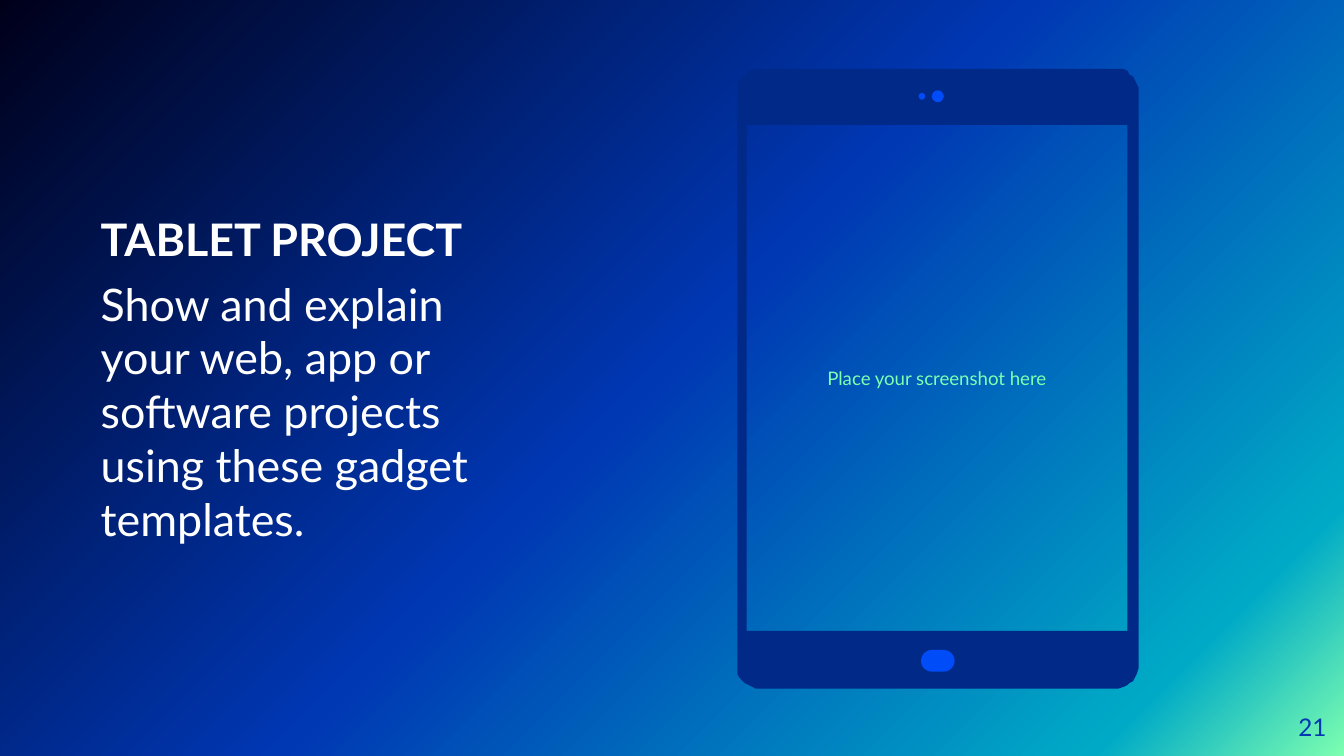
from math import cos, radians, sin

from lxml import etree
from pptx import Presentation
from pptx.dml.color import RGBColor
from pptx.enum.shapes import MSO_SHAPE
from pptx.enum.text import MSO_ANCHOR, PP_ALIGN
from pptx.oxml.ns import qn
from pptx.util import Pt

OVAL = MSO_SHAPE.OVAL
ROUNDED = MSO_SHAPE.ROUNDED_RECTANGLE
MIDDLE = MSO_ANCHOR.MIDDLE
LEFT, CENTER, RIGHT = PP_ALIGN.LEFT, PP_ALIGN.CENTER, PP_ALIGN.RIGHT

FONT = "Lato"
COLORS = {
    "mint": "7DFFB1",
    "teal": "00AAC6",
    "blue": "0037B3",
    "night": "00001A",
    "frame": "002988",
    "accent": "004CF8",
    "white": "FFFFFF",
}
BACKGROUND_STOPS = [(0, "mint"), (12, "teal"), (51, "blue"), (100, "night")]
BACKGROUND_ANGLE = 225

# Boxes are left, top, width, height in points
TABLET = (394.7, 36.6, 215.4, 332.6)
SCREEN = (400.3, 66.7, 204, 271.8)
CORNER_RADIUS = 13
CONTROLS = [
    (ROUNDED, (493.4, 348.2, 18, 11.6)),  # home button
    (OVAL, (492.2, 49.8, 3.4, 3.6)),      # sensor
    (OVAL, (499.2, 48.4, 6.4, 6.4)),      # camera
]

# Box, inset, alignment, size, colour, paragraphs as (text, bold)
TEXTS = [
    ((399.6, 67, 204.5, 270.7), 7.2, CENTER, 10, "mint",
     [("Place your screenshot here", False)]),
    ((667.4, 373.7, 43.2, 31), 0, RIGHT, 13, "blue", [("21", False)]),
    ((54, 29.5, 228.2, 346.3), 0, LEFT, 24, "white",
     [("TABLET PROJECT", True),
      ("Show and explain your web, app or software projects "
       "using these gadget templates.", False)]),
]


def paint(shape, color):
    shape.fill.solid()
    shape.fill.fore_color.rgb = RGBColor.from_string(COLORS[color])
    shape.line.fill.background()
    shape.shadow.inherit = False


def set_background(slide):
    fill = slide.background.fill
    fill.gradient()
    gradient = slide.background._cSld.find(".//" + qn("a:gradFill"))
    stops = gradient.find(qn("a:gsLst"))
    for stop in list(stops):
        stops.remove(stop)
    for position, color in BACKGROUND_STOPS:
        stop = etree.SubElement(stops, qn("a:gs"), pos=str(position * 1000))
        etree.SubElement(stop, qn("a:srgbClr"), val=COLORS[color])
    direction = gradient.find(qn("a:lin"))
    direction.set("ang", str(BACKGROUND_ANGLE * 60000))
    direction.set("scaled", "0")


def rounded_outline(box, radius, step=10):
    left, top, width, height = box
    right, bottom = left + width - radius, top + height - radius
    left, top = left + radius, top + radius
    corners = [(right, bottom), (left, bottom), (left, top), (right, top)]
    return [
        (x + radius * cos(radians(angle)), y + radius * sin(radians(angle)))
        for index, (x, y) in enumerate(corners)
        for angle in range(index * 90, index * 90 + 91, step)
    ]


def add_tablet(slide):
    # Frame with the screen cut out
    outline = rounded_outline(TABLET, CORNER_RADIUS)
    left, top, width, height = SCREEN
    right, bottom = left + width, top + height
    opening = [(right, top), (right, bottom), (left, bottom), (left, top)]
    builder = slide.shapes.build_freeform(*opening[0], scale=Pt(1))
    builder.add_line_segments(opening[1:], close=True)
    builder.move_to(*outline[0])
    builder.add_line_segments(outline[1:], close=True)
    paint(builder.convert_to_shape(), "frame")

    # Button, sensor and camera
    for kind, box in CONTROLS:
        control = slide.shapes.add_shape(kind, *map(Pt, box))
        if kind == ROUNDED:
            control.adjustments[0] = 0.5
        paint(control, "accent")


def add_text(slide, box, inset, alignment, size, color, paragraphs):
    frame = slide.shapes.add_textbox(*map(Pt, box)).text_frame
    frame.word_wrap = True
    frame.vertical_anchor = MIDDLE
    frame.margin_left = frame.margin_right = Pt(inset)
    frame.margin_top = frame.margin_bottom = Pt(inset)
    frame.text = "\n".join(text for text, bold in paragraphs)
    for index, (text, bold) in enumerate(paragraphs):
        paragraph = frame.paragraphs[index]
        paragraph.alignment = alignment
        if index:
            paragraph.space_before = Pt(6)
        font = paragraph.runs[0].font
        font.name = FONT
        font.size = Pt(size)
        font.bold = bold
        font.color.rgb = RGBColor.from_string(COLORS[color])


def main():
    presentation = Presentation()
    presentation.slide_width = Pt(720)
    presentation.slide_height = Pt(405)
    slide = presentation.slides.add_slide(presentation.slide_layouts[6])
    set_background(slide)
    add_tablet(slide)
    for text in TEXTS:
        add_text(slide, *text)
    presentation.save("out.pptx")


if __name__ == "__main__":
    main()
